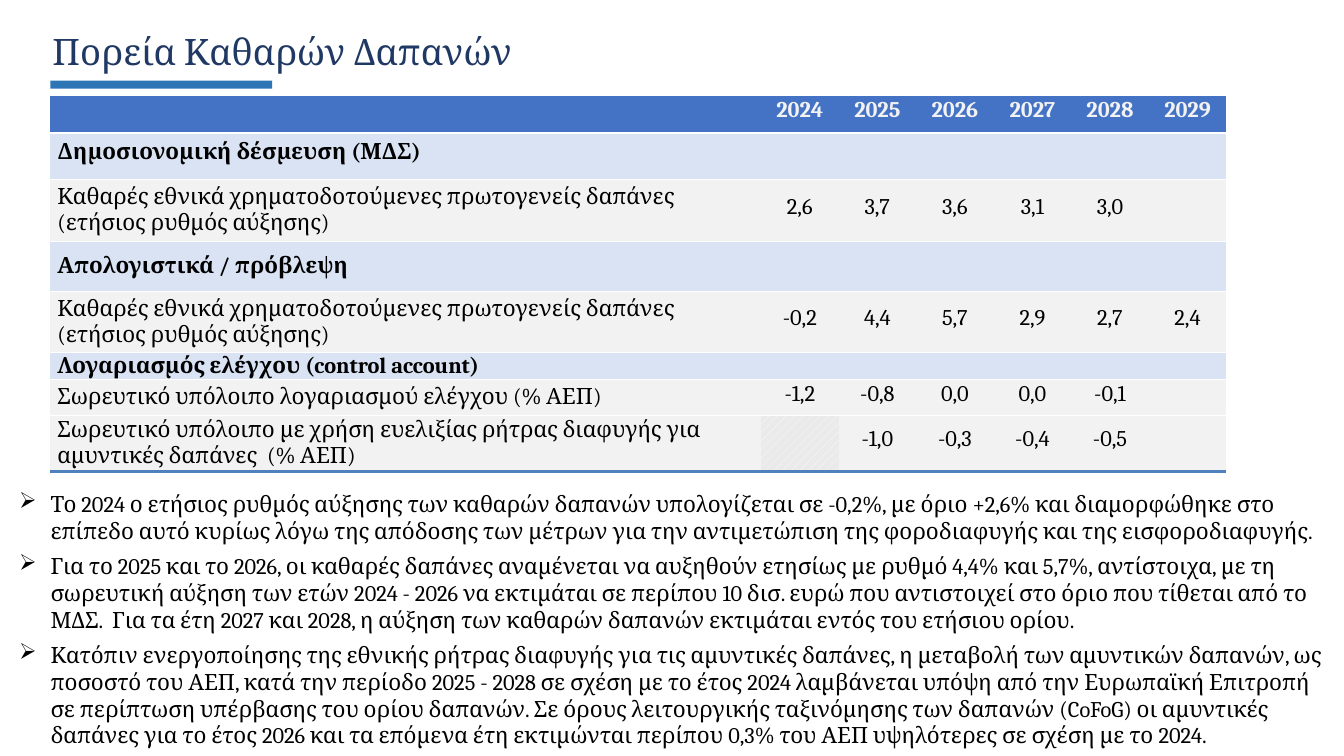
from lxml import etree
from pptx import Presentation
from pptx.dml.color import RGBColor
from pptx.enum.dml import MSO_PATTERN
from pptx.enum.shapes import MSO_SHAPE
from pptx.enum.text import MSO_ANCHOR, MSO_AUTO_SIZE, PP_ALIGN
from pptx.oxml.ns import qn
from pptx.util import Pt

LEFT, CENTER = PP_ALIGN.LEFT, PP_ALIGN.CENTER
TOP, MIDDLE = MSO_ANCHOR.TOP, MSO_ANCHOR.MIDDLE
GROW = MSO_AUTO_SIZE.SHAPE_TO_FIT_TEXT
RECTANGLE = MSO_SHAPE.RECTANGLE
DOTTED = MSO_PATTERN.PERCENT_20
TITLE_ONLY = 5

WHITE, BLACK, NAVY, ACCENT = "FFFFFF", "000000", "203864", "2E75B6"
HEADER, SECTION, PLAIN, RULE = "4472C4", "DAE3F3", "F2F2F2", "4F81BD"

NET_SPENDING = ("Καθαρές εθνικά χρηματοδοτούμενες πρωτογενείς δαπάνες \n"
                "(ετήσιος ρυθμός αύξησης)")
# Fill, row height, label, yearly values
ROWS = [
    (HEADER, 26.6, "", "2024 2025 2026 2027 2028 2029"),
    (SECTION, 33.1, "Δημοσιονομική δέσμευση (ΜΔΣ)", ""),
    (PLAIN, 44.6, NET_SPENDING, "2,6 3,7 3,6 3,1 3,0"),
    (SECTION, 35.3, "Απολογιστικά / πρόβλεψη", ""),
    (PLAIN, 43.9, NET_SPENDING, "-0,2 4,4 5,7 2,9 2,7 2,4"),
    (SECTION, 16.6, "Λογαριασμός ελέγχου (control account)", ""),
    (PLAIN, 25.9, "Σωρευτικό υπόλοιπο λογαριασμού ελέγχου (% ΑΕΠ)",
     "-1,2 -0,8 0,0 0,0 -0,1"),
    (PLAIN, 39.6, "Σωρευτικό υπόλοιπο με χρήση ευελιξίας ρήτρας διαφυγής για "
     "αμυντικές δαπάνες  (% ΑΕΠ)", "n/a -1,0 -0,3 -0,4 -0,5"),
]
COLUMNS = [507.6] + [55.4] * 6

REMARKS = [
    "Το 2024 ο ετήσιος ρυθμός αύξησης των καθαρών δαπανών υπολογίζεται σε -0,2%, "
    "με όριο +2,6% και διαμορφώθηκε στο επίπεδο αυτό κυρίως λόγω της απόδοσης των "
    "μέτρων για την αντιμετώπιση της φοροδιαφυγής και της εισφοροδιαφυγής.",
    "Για το 2025 και το 2026, οι καθαρές δαπάνες αναμένεται να αυξηθούν ετησίως με "
    "ρυθμό 4,4% και 5,7%, αντίστοιχα, με τη σωρευτική αύξηση των ετών 2024 - 2026 "
    "να εκτιμάται σε περίπου 10 δισ. ευρώ που αντιστοιχεί στο όριο που τίθεται από "
    "το ΜΔΣ.  Για τα έτη 2027 και 2028, η αύξηση των καθαρών δαπανών εκτιμάται "
    "εντός του ετήσιου ορίου.",
    "Κατόπιν ενεργοποίησης της εθνικής ρήτρας διαφυγής για τις αμυντικές δαπάνες, η "
    "μεταβολή των αμυντικών δαπανών, ως ποσοστό του ΑΕΠ, κατά την περίοδο "
    "2025 - 2028 σε σχέση με το έτος 2024 λαμβάνεται υπόψη από την Ευρωπαϊκή "
    "Επιτροπή σε περίπτωση υπέρβασης του ορίου δαπανών. Σε όρους λειτουργικής "
    "ταξινόμησης των δαπανών (CoFoG) οι αμυντικές δαπάνες για το έτος 2026 και τα "
    "επόμενα έτη εκτιμώνται περίπου 0,3% του ΑΕΠ υψηλότερες σε σχέση με το 2024.",
]


def rgb(code):
    return RGBColor.from_string(code)


def write(paragraph, text, font="Cambria", size=16, color=BLACK, bold=False,
          align=LEFT, before=0, after=0, leading=None):
    """Fill a paragraph, turning each newline into a line break."""
    paragraph.alignment = align
    paragraph.space_before, paragraph.space_after = Pt(before), Pt(after)
    if leading:
        paragraph.line_spacing = Pt(leading)
    for number, line in enumerate(text.split("\n")):
        if number:
            paragraph.add_line_break()
        run = paragraph.add_run()
        run.text = line
        run.font.name, run.font.size, run.font.bold = font, Pt(size), bold
        run.font.color.rgb = rgb(color)


def border(cell, side, color=None, width=1):
    """Draw one edge of a cell; without a colour the edge is hidden."""
    line = etree.SubElement(cell._tc.get_or_add_tcPr(), qn(f"a:ln{side}"),
                            w=str(Pt(width)))
    if color:
        fill = etree.SubElement(line, qn("a:solidFill"))
        etree.SubElement(fill, qn("a:srgbClr"), val=color)
    else:
        etree.SubElement(line, qn("a:noFill"))


def bullet(paragraph, symbol, indent):
    properties = paragraph._p.get_or_add_pPr()
    properties.set("marL", str(Pt(indent)))
    properties.set("indent", str(-Pt(indent)))
    etree.SubElement(properties, qn("a:buChar"), char=symbol)


class SlideBuilder:
    def __init__(self, slide):
        self.slide = slide

    def title(self, text, left, top, width, height):
        heading = self.slide.shapes.title
        heading.left, heading.top = Pt(left), Pt(top)
        heading.width, heading.height = Pt(width), Pt(height)
        frame = heading.text_frame
        frame.vertical_anchor, frame.word_wrap = TOP, True
        frame.auto_size = GROW
        write(frame.paragraphs[0], text, size=26, color=NAVY)

    def bar(self, left, top, width, height, color):
        underline = self.slide.shapes.add_shape(
            RECTANGLE, Pt(left), Pt(top), Pt(width), Pt(height))
        underline.shadow.inherit = False
        underline.fill.solid()
        underline.fill.fore_color.rgb = rgb(color)
        underline.line.fill.background()

    def table(self, left, top, columns, rows):
        grid = self.slide.shapes.add_table(
            len(rows), len(columns), Pt(left), Pt(top), Pt(sum(columns)),
            Pt(sum(row[1] for row in rows))).table
        grid.first_row = grid.horz_banding = False
        for column, width in zip(grid.columns, columns):
            column.width = Pt(width)
        for r, (fill, height, label, values) in enumerate(rows):
            grid.rows[r].height = Pt(height)
            entries = [label] + values.split()
            entries += [""] * (len(columns) - len(entries))
            for c, entry in enumerate(entries):
                self.cell(grid.cell(r, c), entry, fill, is_value=c > 0,
                          tight=c > 0 or r < 2, is_last=r == len(rows) - 1)

    def cell(self, cell, text, fill, is_value, tight, is_last):
        cell.vertical_anchor = MIDDLE
        cell.margin_left = cell.margin_right = Pt(5)
        cell.margin_top = cell.margin_bottom = 0
        border(cell, "L")
        border(cell, "R")
        border(cell, "T", WHITE)
        border(cell, "B", *((RULE, 2.25) if is_last else (WHITE, 1)))
        if text == "n/a":
            cell.fill.patterned()
            cell.fill.pattern = DOTTED
            cell.fill.fore_color.rgb = rgb(WHITE)
            cell.fill.back_color.rgb = rgb("EAEAEA")
        else:
            cell.fill.solid()
            cell.fill.fore_color.rgb = rgb(fill)
        paragraph = cell.text_frame.paragraphs[0]
        if text in ("", "n/a"):
            etree.SubElement(paragraph._p, qn("a:endParaRPr"), sz="1000")
            return
        is_header = fill == HEADER
        write(paragraph, text, color=PLAIN if is_header else BLACK,
              bold=fill != PLAIN, align=CENTER if is_value else LEFT,
              before=0 if is_header else 3, after=8 if is_header else 6,
              leading=13 if tight else None)

    def bullets(self, texts, left, top, width, height):
        frame = self.slide.shapes.add_textbox(
            Pt(left), Pt(top), Pt(width), Pt(height)).text_frame
        frame.word_wrap, frame.auto_size = True, GROW
        for number, text in enumerate(texts):
            paragraph = frame.add_paragraph() if number else frame.paragraphs[0]
            write(paragraph, text, after=6)
            bullet(paragraph, "➢", 22.5)


def main():
    deck = Presentation()
    deck.slide_width, deck.slide_height = Pt(960), Pt(540)
    page = SlideBuilder(deck.slides.add_slide(deck.slide_layouts[TITLE_ONLY]))
    page.title("Πορεία Καθαρών Δαπανών", 30.2, 17.3, 895.7, 38.9)
    page.bar(36, 57.6, 158.4, 5.8, ACCENT)
    page.table(36, 68.4, COLUMNS, ROWS)
    page.bullets(REMARKS, 6.5, 346.3, 946.8, 193.7)
    deck.save("out.pptx")


if __name__ == "__main__":
    main()
